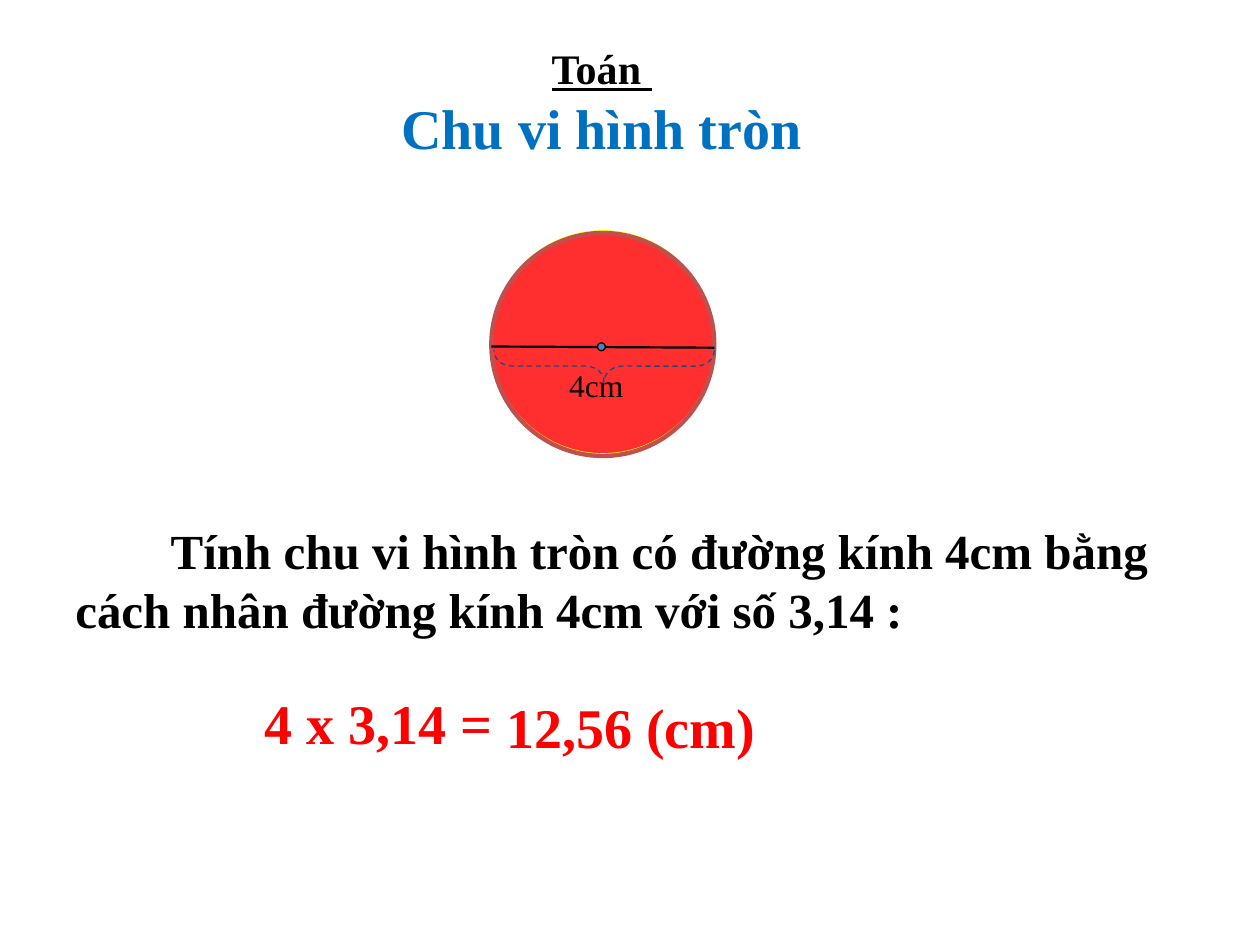
import pptx
import pptx.util
import pptx.dml.color
import pptx.enum.dml
import pptx.enum.shapes
import pptx.enum.text
import pptx.oxml

Pt = pptx.util.Pt
RGBColor = pptx.dml.color.RGBColor
MSO_SHAPE = pptx.enum.shapes.MSO_SHAPE
ALIGN = pptx.enum.text.PP_ALIGN

BLACK = RGBColor(0x00, 0x00, 0x00)
RED = RGBColor(0xFF, 0x00, 0x00)
BLUE = RGBColor(0x00, 0x70, 0xC0)
DISC = RGBColor(0xFF, 0x2F, 0x2F)
YELLOW = RGBColor(0xFF, 0xFF, 0x00)
RIM = RGBColor(0xC0, 0x50, 0x4D)
CENTRE = RGBColor(0x4F, 0x81, 0xBD)
NAVY = RGBColor(0x1F, 0x49, 0x7D)
FONT = "Times New Roman"

# (left, top, width, height), lines, format
TITLE = ((151.9, 21, 383.8, 72), [
    ("Toán ", dict(size=24, underline=True, align=ALIGN.CENTER)),
    ("Chu vi hình tròn", dict(size=32, color=BLUE, align=ALIGN.CENTER)),
])
DIAMETER = ((318.2, 205.9, 59.8, 28.8), [("4cm", dict(size=18, bold=False))])
TEXTS = [
    ((36, 293.8, 648, 74.9), [
        ("Tính chu vi hình tròn có đường kính 4cm bằng cách nhân đường kính "
         "4cm với số 3,14 :", dict(size=28, indent=54.5))]),
    ((144, 390.2, 180, 46.1), [("4 x 3,14 =", dict(size=32, color=RED))]),
    ((282.2, 392.4, 198, 46.1), [("12,56 (cm)", dict(size=32, color=RED))]),
]


def write(p, text, size, color=BLACK, bold=True, underline=False,
          align=ALIGN.LEFT, indent=0):
    p.alignment = align
    if indent:
        p._p.get_or_add_pPr().set("indent", str(Pt(indent)))
    r = p.add_run()
    r.text = text
    r.font.name, r.font.size = FONT, Pt(size)
    r.font.bold, r.font.underline = bold, underline
    r.font.color.rgb = color


def add_text(s, box, lines):
    tf = s.shapes.add_textbox(*map(Pt, box)).text_frame
    tf.word_wrap = True
    for i, (text, style) in enumerate(lines):
        p = tf.add_paragraph() if i else tf.paragraphs[0]
        write(p, text, **style)


def add_outline(s, kind, box, line, width, fill=None):
    sp = s.shapes.add_shape(kind, *map(Pt, box))
    sp.shadow.inherit = False
    if fill is None:
        sp.fill.background()
    else:
        sp.fill.solid()
        sp.fill.fore_color.rgb = fill
    sp.line.color.rgb = line
    sp.line.width = Pt(width)
    return sp


def add_circle(s):
    """Draw the disc with its diameter, label, centre point and brace."""
    size = 127.4
    add_outline(s, MSO_SHAPE.OVAL, (280.8, 131.8, size, size), YELLOW, 0.5, DISC)
    add_outline(s, MSO_SHAPE.OVAL, (280.8, 133.2, size, size), RIM, 2.5)

    line = s.shapes.add_connector(pptx.enum.shapes.MSO_CONNECTOR.STRAIGHT,
                                  Pt(280.8), Pt(198), Pt(408.2), Pt(198.7))
    line.line.color.rgb = BLACK
    line.line.width = Pt(1.25)
    line._element.spPr.append(pptx.oxml.parse_xml(
        '<a:effectLst xmlns:a='
        '"http://schemas.openxmlformats.org/drawingml/2006/main"/>'))

    add_text(s, *DIAMETER)
    add_outline(s, MSO_SHAPE.OVAL, (341.4, 195.9, 4.5, 4.5), BLACK, 0.75, CENTRE)

    brace = add_outline(s, MSO_SHAPE.RIGHT_BRACE, (336.2, 146.2, 18, 126), NAVY, 0.75)
    brace.rotation = 90
    brace.adjustments[0] = 0.58
    brace.line.dash_style = pptx.enum.dml.MSO_LINE.DASH


def main():
    prs = pptx.Presentation()
    prs.slide_width, prs.slide_height = Pt(720), Pt(540)
    s = prs.slides.add_slide(prs.slide_layouts[6])
    add_circle(s)
    for box, lines in TEXTS + [TITLE]:
        add_text(s, box, lines)
    prs.save("out.pptx")


if __name__ == "__main__":
    main()
